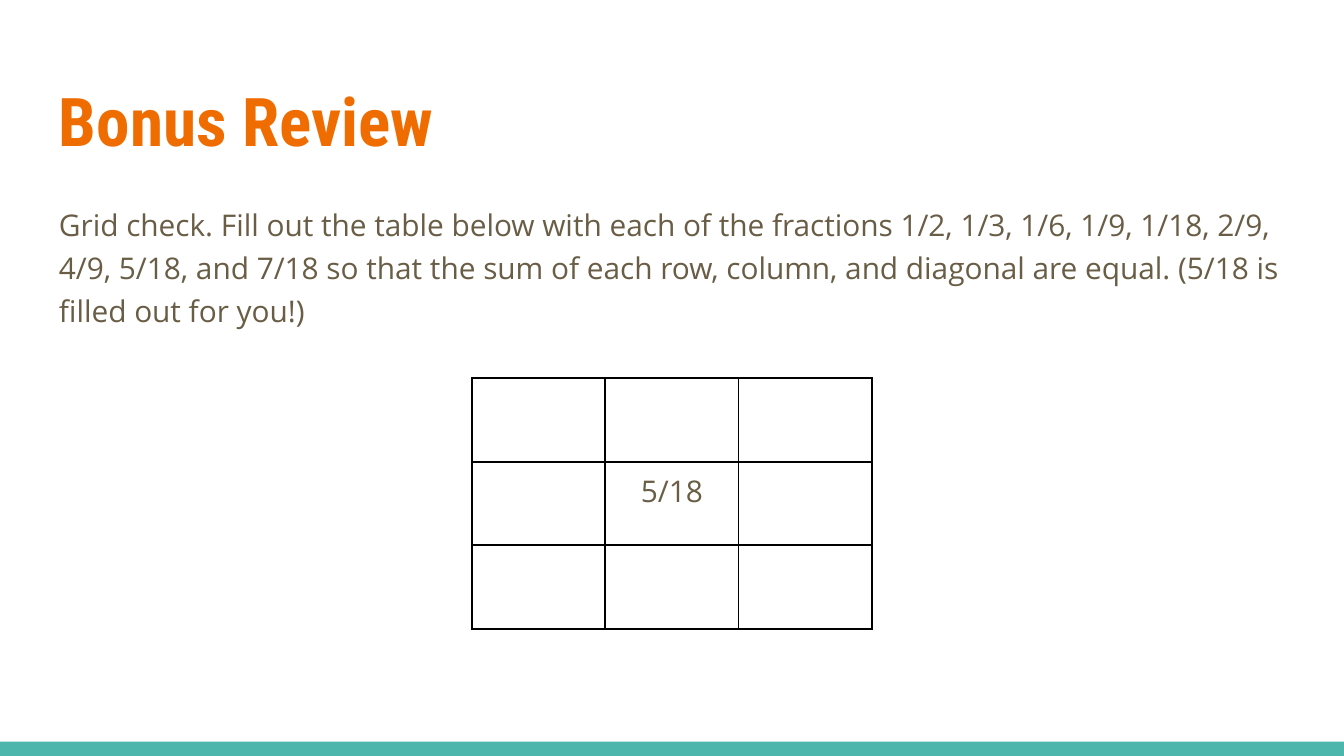
from pptx import Presentation
from pptx import util as u
from pptx.dml import color
from pptx.enum import shapes, text
from pptx.oxml import parse_xml
from pptx.oxml.ns import nsdecls

WIDTH = u.Inches(10)
HEIGHT = WIDTH * 9 // 16
ORANGE, BROWN, TEAL = "EF6C00", "695D46", "4DB6AC"
WHITE, BLACK = "FFFFFF", "000000"
HEADING_FONT, BODY_FONT = "Roboto Condensed", "Open Sans"
QUESTION = (
    "Grid check. Fill out the table below with each of the fractions "
    "1/2, 1/3, 1/6, 1/9, 1/18, 2/9, 4/9, 5/18, and 7/18 so that the sum of "
    "each row, column, and diagonal are equal. (5/18 is filled out for you!)"
)
SQUARE = [["", "", ""], ["", "5/18", ""], ["", "", ""]]


def rgb(value):
    return color.RGBColor.from_string(value)


def percent_box(left, top, width, height):
    return (round(WIDTH * left / 100), round(HEIGHT * top / 100),
            round(WIDTH * width / 100), round(HEIGHT * height / 100))


def paint(fill, ink):
    fill.solid()
    fill.fore_color.rgb = rgb(ink)


def set_margins(holder, margin):
    holder.margin_left = holder.margin_right = u.Inches(margin)
    holder.margin_top = holder.margin_bottom = u.Inches(margin)


def add_span(para, words, font, size, ink, bold=False):
    span = para.add_run()
    span.text = words
    span.font.name = font
    span.font.size = u.Pt(size)
    span.font.bold = bold
    span.font.color.rgb = rgb(ink)


def add_text(page, box, words, font, size, ink, bold=False, spacing=1):
    frame = page.shapes.add_textbox(*box).text_frame
    frame.word_wrap = True
    frame.vertical_anchor = text.MSO_ANCHOR.TOP
    set_margins(frame, 0.1)
    para = frame.paragraphs[0]
    para.line_spacing = spacing
    add_span(para, words, font, size, ink, bold)


def add_footer(page, box):
    bar = page.shapes.add_shape(shapes.MSO_SHAPE.RECTANGLE, *box)
    bar.shadow.inherit = False
    paint(bar.fill, TEAL)
    bar.line.fill.background()


def add_borders(cell):
    properties = cell._tc.get_or_add_tcPr()
    for index, side in enumerate(("lnL", "lnR", "lnT", "lnB")):
        border = parse_xml(
            f'<a:{side} {nsdecls("a")} w="{u.Pt(1)}"><a:solidFill>'
            f'<a:srgbClr val="{BLACK}"/></a:solidFill></a:{side}>'
        )
        properties.insert(index, border)


def add_square(page, box, rows):
    left, top, width, height = box
    table = page.shapes.add_table(len(rows), len(rows[0]), *box).table
    table.first_row = table.horz_banding = False
    for column in table.columns:
        column.width = width // len(rows[0])
    for row, values in zip(table.rows, rows):
        row.height = height // len(rows)
        for cell, value in zip(row.cells, values):
            cell.fill.background()
            set_margins(cell, 0.07)
            add_borders(cell)
            if value:
                para = cell.text_frame.paragraphs[0]
                para.alignment = text.PP_ALIGN.CENTER
                add_span(para, value, BODY_FONT, 16, BROWN)


def main():
    deck = Presentation()
    deck.slide_width, deck.slide_height = WIDTH, HEIGHT
    page = deck.slides.add_slide(deck.slide_layouts[6])
    paint(page.background.fill, WHITE)
    add_footer(page, percent_box(0, 98.1, 100, 1.9))
    add_text(page, percent_box(3.41, 8.75, 93.18, 13.6), "Bonus Review",
             HEADING_FONT, 36, ORANGE, bold=True)
    add_text(page, percent_box(3.41, 24.6, 93.18, 64.2), QUESTION,
             BODY_FONT, 16, BROWN, spacing=1.2)
    add_square(page, percent_box(35.11, 50.04, 29.78, 33.15), SQUARE)
    deck.save("out.pptx")


if __name__ == "__main__":
    main()
